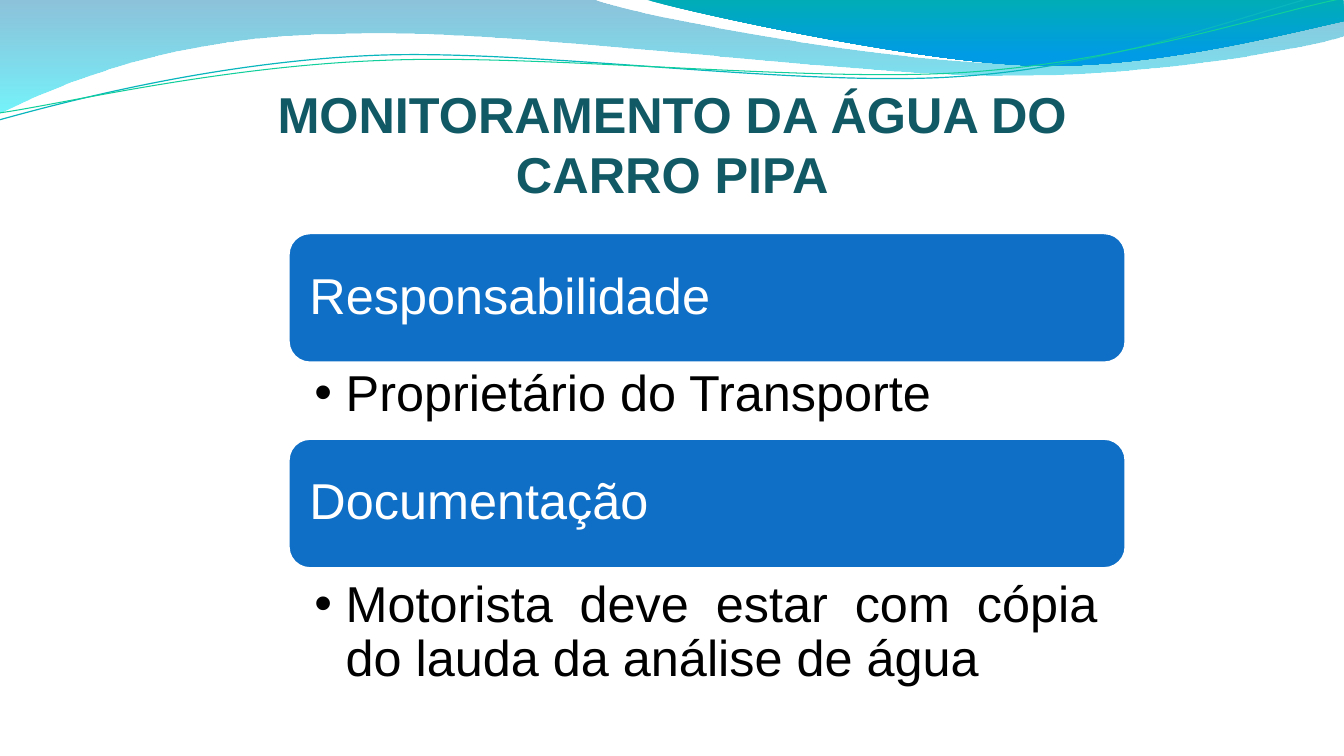
import pptx
import pptx.util
import pptx.dml.color
import pptx.enum.shapes
import pptx.enum.text
import pptx.oxml
import pptx.oxml.ns

Inches = pptx.util.Inches
Pt = pptx.util.Pt
qn = pptx.oxml.ns.qn
ALIGN = pptx.enum.text.PP_ALIGN
ANCHOR = pptx.enum.text.MSO_ANCHOR

TITLE = "MONITORAMENTO DA ÁGUA DO CARRO PIPA"
TOPICS = [
    ("Responsabilidade", "Proprietário do Transporte", ALIGN.LEFT, 3.6),
    ("Documentação", "Motorista deve estar com cópia do lauda da análise de água",
     ALIGN.JUSTIFY, 5.69),
]
FONT, SIZE = "Arial", 36
WIDTH, HEIGHT = 40 / 3, 7.5
CARD_LEFT, CARD_TOP, CARD_W, CARD_H, CARD_STEP = 2.86, 2.31, 8.31, 1.29, 2.04
INSET = 0.06

BANDS = [
    ([(0, -0.01), (5.87, -0.01),
      (6.34, 0.17, 8.85, 0.63, 10.11, 0.63), (11.38, 0.63, 12.78, 0.26, 13.33, 0.09),
      (13.35, 0.36),
      (13.11, 0.44, 11.6, 0.76, 9.94, 0.75), (8.29, 0.75, 5.09, 0.28, 3.43, 0.34),
      (1.72, 0.35, 0.61, 0.83, -0.01, 1.13)],
     [(0, "0079AF", 45), (100, "00EBF8", 55)]),
    ([(6.39, -0.01),
      (6.79, 0.11, 9.09, 0.62, 10.25, 0.65), (11.41, 0.69, 12.82, 0.32, 13.33, 0.21),
      (13.33, 0)],
     [(0, "00ADB6", 100), (80, "009BE5", 100), (100, "009BE5", 100)]),
]
WAVES = [
    ([(-0.01, 1.19),
      (0.64, 1.01, 2.11, 0.62, 3.69, 0.55), (5.27, 0.48, 7.9, 0.87, 9.5, 0.76),
      (11.1, 0.66, 12.52, 0.08, 13.31, -0.1)], "09B6BE", 0.85),
    ([(0, 1.12),
      (0.63, 1.03, 2.18, 0.66, 3.78, 0.6), (5.37, 0.53, 7.96, 0.82, 9.55, 0.72),
      (11.15, 0.62, 12.55, 0.14, 13.34, -0.02)], "10CF9B", 0.75),
]


def color(value):
    return pptx.dml.color.RGBColor.from_string(value)


def add_outline(s, steps, close):
    points = [(Inches(step[i]), Inches(step[i + 1]))
              for step in steps for i in range(0, len(step), 2)]
    builder = s.shapes.build_freeform(*points[0], scale=1.0)
    builder.add_line_segments(points[1:], close=close)
    sp = builder.convert_to_shape()
    sp.shadow.inherit = False
    segments = iter(sp.element.spPr.findall(".//" + qn("a:lnTo")))
    for step in steps[1:]:
        first = next(segments)
        if len(step) == 6:
            curve = pptx.oxml.parse_xml(
                f'<a:cubicBezTo {pptx.oxml.ns.nsdecls("a")}/>')
            first.addprevious(curve)
            for segment in (first, next(segments), next(segments)):
                curve.append(segment[0])
                segment.getparent().remove(segment)
    return sp


def add_band(s, steps, stops):
    sp = add_outline(s, steps, True)
    sp.line.fill.background()
    sp.fill.gradient()
    sp.fill.gradient_angle = 270
    stop_list = sp.element.spPr.find(".//" + qn("a:gsLst"))
    for old in list(stop_list):
        stop_list.remove(old)
    for pos, value, alpha in stops:
        stop_list.append(pptx.oxml.parse_xml(
            f'<a:gs {pptx.oxml.ns.nsdecls("a")} pos="{pos * 1000}">'
            f'<a:srgbClr val="{value}"><a:alpha val="{alpha * 1000}"/></a:srgbClr></a:gs>'))


def add_wave(s, steps, value, width):
    sp = add_outline(s, steps, False)
    sp.fill.background()
    sp.line.color.rgb = color(value)
    sp.line.width = Pt(width)


def add_text(s, text, box, insets, value, anchor=ANCHOR.TOP, align=ALIGN.LEFT,
             bold=False, spacing=None, bullet=False):
    tf = s.shapes.add_textbox(*map(Inches, box)).text_frame
    tf.word_wrap = True
    tf.vertical_anchor = anchor
    tf.margin_left, tf.margin_top, tf.margin_right, tf.margin_bottom = map(Inches, insets)
    p = tf.paragraphs[0]
    if bullet:
        pPr = p._p.get_or_add_pPr()
        pPr.set("marL", str(Inches(0.31)))
        pPr.set("indent", str(Inches(-0.31)))
        for tag in (f'buFont typeface="{FONT}"', 'buChar char="•"'):
            name, attribute = tag.split(" ", 1)
            pPr.append(pptx.oxml.parse_xml(
                f'<a:{name} {pptx.oxml.ns.nsdecls("a")} {attribute}/>'))
    p.alignment = align
    if spacing:
        p.line_spacing = spacing
    r = p.add_run()
    r.text = text
    r.font.name, r.font.size, r.font.bold = FONT, Pt(SIZE), bold
    r.font.color.rgb = color(value)


def add_card(s, top):
    sp = s.shapes.add_shape(pptx.enum.shapes.MSO_SHAPE.ROUNDED_RECTANGLE,
                            *map(Inches, (CARD_LEFT, top, CARD_W, CARD_H)))
    sp.shadow.inherit = False
    sp.fill.solid()
    sp.fill.fore_color.rgb = color("0F6FC6")
    sp.line.color.rgb = color("FFFFFF")
    sp.line.width = Pt(2)


def main():
    prs = pptx.Presentation()
    prs.slide_width, prs.slide_height = Inches(WIDTH), Inches(HEIGHT)
    s = prs.slides.add_slide(prs.slide_layouts[6])
    for band in BANDS:
        add_band(s, *band)
    for wave in WAVES:
        add_wave(s, *wave)
    add_text(s, TITLE, (2.17, 0.77, 9, 1.25), (0, 0.05, 0, 0), "115964",
             ANCHOR.BOTTOM, ALIGN.CENTER, bold=True)
    for i, (heading, detail, align, detail_top) in enumerate(TOPICS):
        top = CARD_TOP + i * CARD_STEP
        add_card(s, top)
        add_text(s, heading,
                 (CARD_LEFT + INSET, top + INSET, CARD_W - 2 * INSET, CARD_H - 2 * INSET),
                 (0.15,) * 4, "FFFFFF", ANCHOR.MIDDLE, spacing=0.9)
        add_text(s, detail, (CARD_LEFT, detail_top, CARD_W, 1.14),
                 (0.26, 0.05, 0.28, 0.05), "000000", align=align, spacing=0.9, bullet=True)
    prs.save("out.pptx")


if __name__ == "__main__":
    main()
